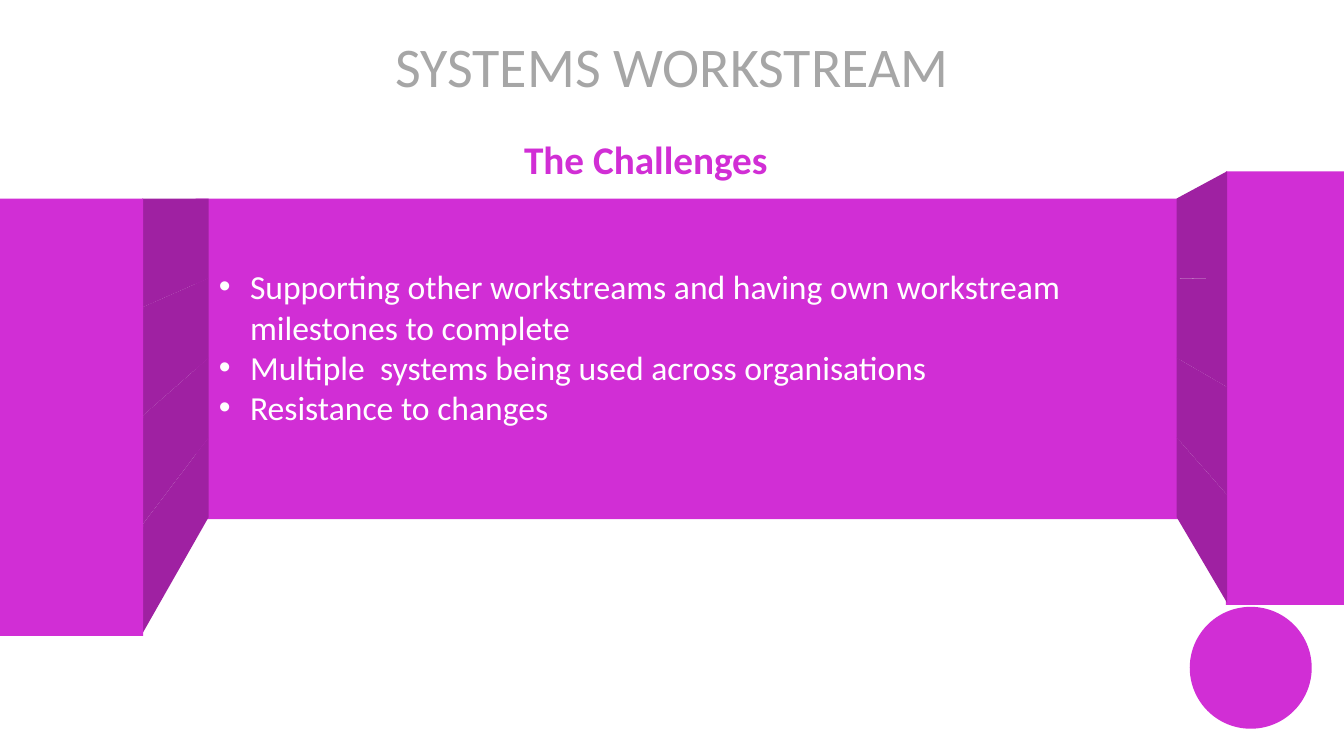
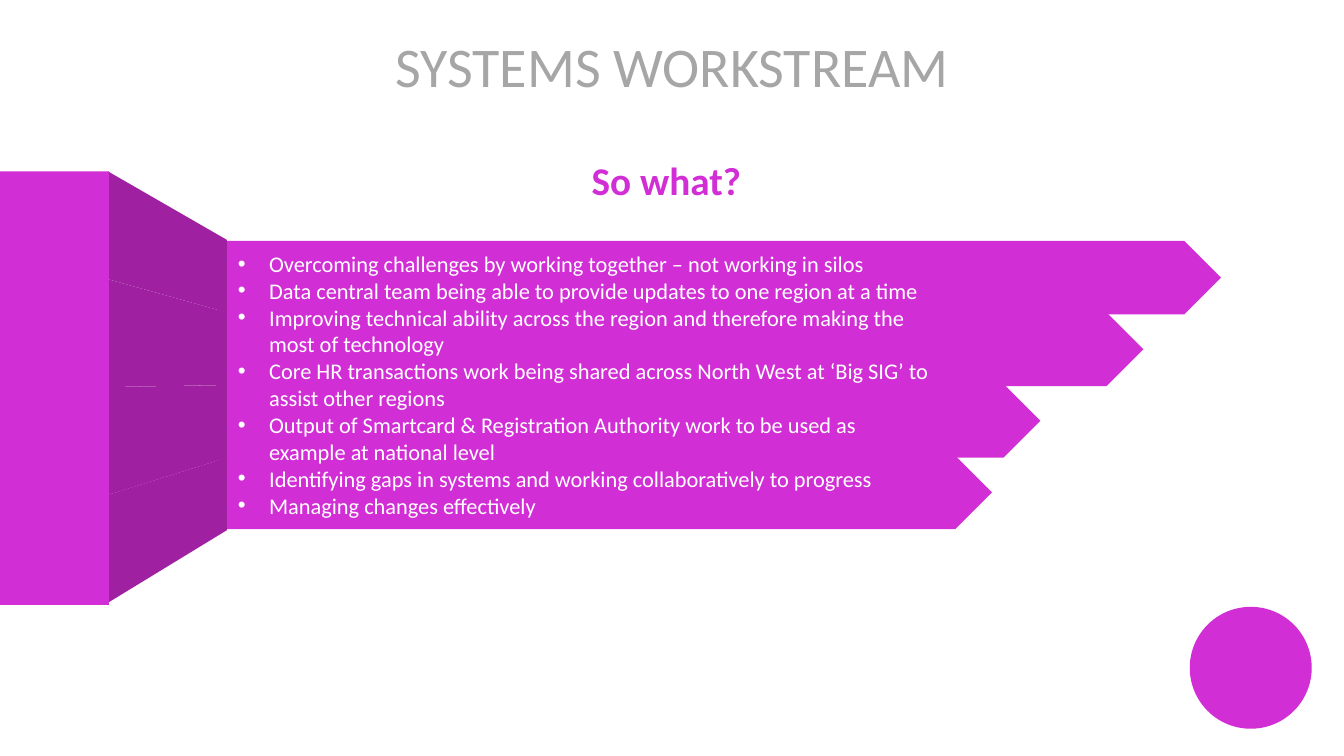
from lxml import etree
from pptx import Presentation
from pptx.dml.color import RGBColor
from pptx.enum.shapes import MSO_SHAPE
from pptx.enum.text import MSO_ANCHOR, MSO_AUTO_SIZE, PP_ALIGN
from pptx.oxml.ns import qn
from pptx.util import Inches, Pt

RECTANGLE = MSO_SHAPE.RECTANGLE
PENTAGON = MSO_SHAPE.PENTAGON
OVAL = MSO_SHAPE.OVAL
TOP = MSO_ANCHOR.TOP
LEFT, CENTER = PP_ALIGN.LEFT, PP_ALIGN.CENTER
NO_AUTOFIT = MSO_AUTO_SIZE.NONE

MAGENTA = RGBColor(0xD1, 0x2E, 0xD5)
PURPLE = RGBColor(0x9F, 0x21, 0xA2)
GREY = RGBColor(0xA6, 0xA6, 0xA6)
WHITE = RGBColor(0xFF, 0xFF, 0xFF)

FONT = "Calibri"
SLIDE_W, SLIDE_H = 13.33, 7.5
TITLE = "SYSTEMS WORKSTREAM"
TITLE_BOX = (1.36, 0.26, 10.61, 0.77)
CIRCLE_BOX = (11.8, 6.02, 1.21, 1.21)
BULLET_INDENT = 0.31
ROWS = 4
OVERLAP = 0.02

CHALLENGES = [
    "Supporting other workstreams and having own workstream milestones to complete",
    "Multiple  systems being used across organisations",
    "Resistance to changes",
]
OUTCOMES = [
    "Overcoming challenges by working together – not working in silos",
    "Data central team being able to provide updates to one region at a time",
    "Improving technical ability across the region and therefore making the most of technology",
    "Core HR transactions work being shared across North West at ‘Big SIG’ to assist other regions",
    "Output of Smartcard & Registration Authority work to be used as example at national level",
    "Identifying gaps in systems and working collaboratively to progress",
    "Managing changes effectively",
]


def place(shape, box):
    shape.left, shape.top, shape.width, shape.height = map(Inches, box)


def paint(shape, color):
    shape.shadow.inherit = False
    shape.fill.solid()
    shape.fill.fore_color.rgb = color
    shape.line.fill.background()


def add_bullet(paragraph):
    properties = paragraph._p.get_or_add_pPr()
    properties.set("marL", str(Inches(BULLET_INDENT)))
    properties.set("indent", str(-Inches(BULLET_INDENT)))
    etree.SubElement(properties, qn("a:buFont")).set("typeface", "Arial")
    etree.SubElement(properties, qn("a:buChar")).set("char", "•")


def write(shape, lines, *, size, color, bold=False, align=LEFT, bullets=False):
    frame = shape.text_frame
    frame.word_wrap = True
    frame.auto_size = NO_AUTOFIT
    frame.vertical_anchor = TOP
    for index, line in enumerate(lines):
        paragraph = frame.add_paragraph() if index else frame.paragraphs[0]
        paragraph.alignment = align
        paragraph.space_before = Pt(0)
        if bullets:
            add_bullet(paragraph)
        run = paragraph.add_run()
        run.text = line
        font = run.font
        font.name, font.size, font.bold = FONT, Pt(size), bold
        font.color.rgb = color


def add_block(slide, kind, box, color=MAGENTA):
    block = slide.shapes.add_shape(kind, *map(Inches, box))
    paint(block, color)


def add_stack(slide, left, top, pitch, widths, kind=RECTANGLE):
    """Stack rows downwards, each slightly overlapping the next."""
    for row, width in enumerate(widths):
        box = (left, top + row * pitch, width, pitch + OVERLAP)
        add_block(slide, kind, box)


def add_fold(slide, outer, inner):
    """Draw the dark strips between two edges given as (x, top, pitch)."""
    outer_x, outer_top, outer_pitch = outer
    inner_x, inner_top, inner_pitch = inner
    for row in range(ROWS):
        outer_y = outer_top + row * outer_pitch
        inner_y = inner_top + row * inner_pitch
        corners = [
            (outer_x, outer_y),
            (inner_x, inner_y),
            (inner_x, inner_y + inner_pitch),
            (outer_x, outer_y + outer_pitch),
        ]
        points = [(Inches(x), Inches(y)) for x, y in corners]
        builder = slide.shapes.build_freeform(*points[0])
        builder.add_line_segments(points[1:], close=True)
        paint(builder.convert_to_shape(), PURPLE)


def add_ribbon(slide):
    """Draw the wide banner with a folded panel at either end."""
    top, pitch = 1.97, 0.79
    add_stack(slide, 1.94, top, pitch, [9.76] * ROWS)
    right_edge = 12.16
    add_stack(slide, right_edge, 1.7, 1.07, [SLIDE_W - right_edge] * ROWS)
    add_fold(slide, (1.41, top, 1.08), (2.07, top, pitch))
    add_stack(slide, 0, top, 1.08, [1.42] * ROWS)
    add_fold(slide, (12.17, 1.7, 1.07), (11.67, top, pitch))


def add_arrows(slide):
    """Draw arrows of falling length that unfold from the left panel."""
    add_stack(slide, 2.16, 2.39, 0.71, [9.95, 9.18, 8.16, 7.68], PENTAGON)
    add_fold(slide, (1.07, 1.7, 1.07), (2.25, 2.38, 0.72))
    add_stack(slide, 0, 1.7, 1.07, [1.08] * ROWS)


def add_workstream_slide(deck, artwork, heading, heading_box, points, body_box, size):
    slide = deck.slides.add_slide(deck.slide_layouts[1])
    title, body = slide.placeholders
    place(title, TITLE_BOX)
    write(title, [TITLE], size=40, color=GREY, align=CENTER)
    artwork(slide)
    place(body, body_box)
    write(body, points, size=size, color=WHITE, bullets=True)
    body.element.getparent().append(body.element)  # bring in front of the artwork
    subtitle = slide.shapes.add_textbox(*map(Inches, heading_box))
    write(subtitle, [heading], size=28, color=MAGENTA, bold=True)
    add_block(slide, OVAL, CIRCLE_BOX)


def main():
    deck = Presentation()
    deck.slide_width, deck.slide_height = Inches(SLIDE_W), Inches(SLIDE_H)
    add_workstream_slide(deck, add_ribbon, "The Challenges", (5.1, 1.29, 2.7, 0.57),
                         CHALLENGES, (2.07, 2.59, 9.13, 1.72), 24)
    add_workstream_slide(deck, add_arrows, "So what?", (5.77, 1.5, 1.73, 0.57),
                         OUTCOMES, (2.26, 2.43, 7.11, 2.79), 16)
    deck.save("out.pptx")


if __name__ == "__main__":
    main()
